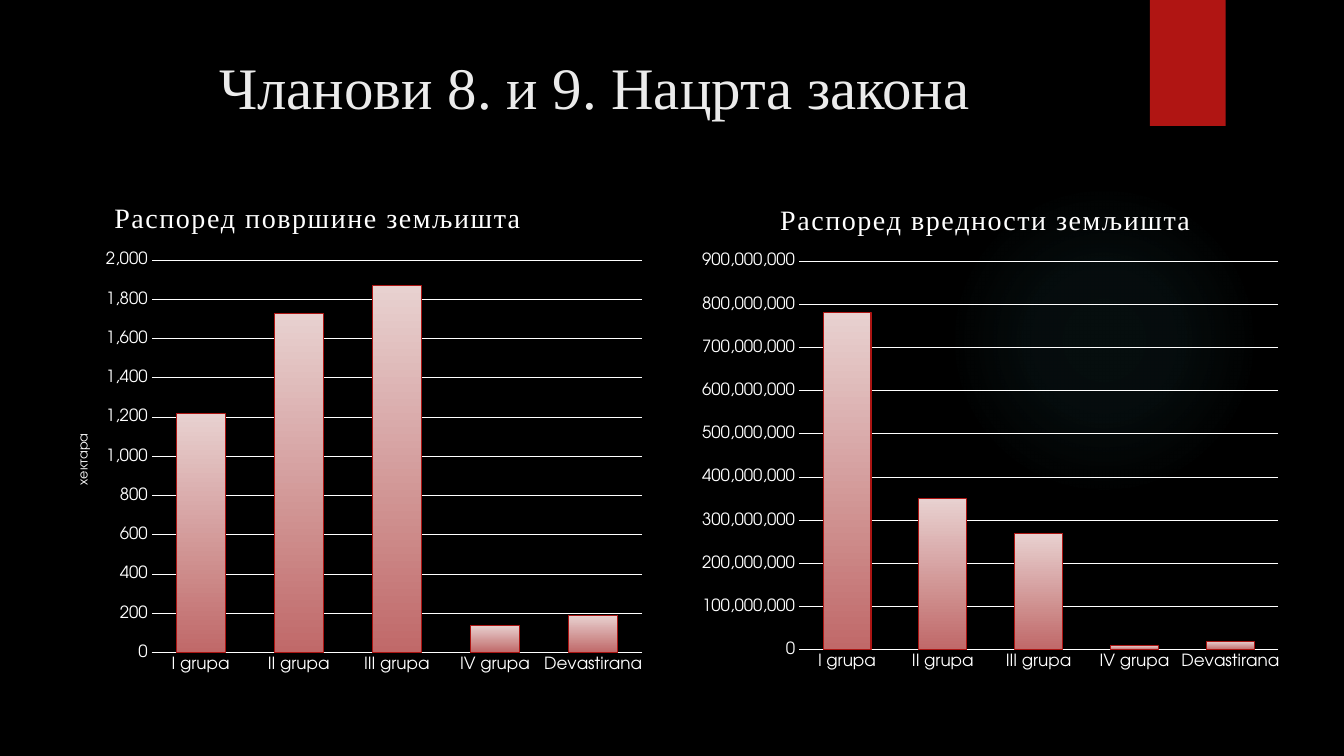
"""Build a dark slide with two column charts on land area and land value."""
from lxml import etree
from pptx import Presentation
from pptx.chart.data import CategoryChartData
from pptx.dml.color import RGBColor
from pptx.enum.chart import XL_CHART_TYPE, XL_TICK_MARK
from pptx.enum.shapes import MSO_SHAPE
from pptx.enum.text import MSO_ANCHOR, MSO_AUTO_SIZE, PP_ALIGN
from pptx.oxml.ns import qn
from pptx.util import Inches, Pt

COLUMN = XL_CHART_TYPE.COLUMN_CLUSTERED
NO_TICK = XL_TICK_MARK.NONE
OVAL, RECTANGLE = MSO_SHAPE.OVAL, MSO_SHAPE.RECTANGLE
TOP, NO_FIT, CENTER = MSO_ANCHOR.TOP, MSO_AUTO_SIZE.NONE, PP_ALIGN.CENTER

BLACK = RGBColor(0x00, 0x00, 0x00)
WHITE = RGBColor(0xFF, 0xFF, 0xFF)
PALE = RGBColor(0xEB, 0xEB, 0xEB)
RED = RGBColor(0xB0, 0x15, 0x13)
BAR_LINE = RGBColor(0xAC, 0x15, 0x13)
BAR_TOP = RGBColor(0xE8, 0xD1, 0xD0)
BAR_BOTTOM = RGBColor(0xC0, 0x69, 0x69)
GLOW = RGBColor(0x50, 0xB9, 0xC1)

SERIF, SANS = "Times New Roman", "TeX Gyre Adventor"
GROUPS = ["I grupa", "II grupa", "III grupa", "IV grupa", "Devastirana"]
WIDTH, HEIGHT = Inches(13.33), Inches(7.5)
GRID_COLUMNS, GRID_ROWS = 16, 9


def format_font(font, size, name=SANS, color=WHITE):
    font.size, font.name, font.bold = Pt(size), name, False
    font.color.rgb = color


def write_text(frame, text, spacing=0, turn=0, **style):
    frame.text = text
    span = frame.paragraphs[0].runs[0]
    format_font(span.font, **style)
    if spacing:
        span.font._element.set("spc", str(spacing * 100))
    if turn:
        frame._txBody.find(qn("a:bodyPr")).set("rot", str(turn * 60000))


def add_child(parent, tag, **attributes):
    return etree.SubElement(parent, qn(tag), {key: str(value) for key, value in attributes.items()})


def set_layout(element, target=None, **shares):
    for old in element.findall(qn("c:layout")):
        element.remove(old)
    layout = etree.Element(qn("c:layout"))
    manual = add_child(layout, "c:manualLayout")
    if target:
        add_child(manual, "c:layoutTarget", val=target)
    for mode in ("xMode", "yMode"):
        add_child(manual, f"c:{mode}", val="edge")
    for key, share in shares.items():
        add_child(manual, f"c:{key}", val=share)
    element.insert(1 if element.find(qn("c:tx")) is not None else 0, layout)


class SlideBuilder:
    def __init__(self, deck):
        self.page = deck.slides.add_slide(deck.slide_layouts[5])
        background = self.page.background.fill
        background.solid()
        background.fore_color.rgb = BLACK

    def place(self, left, top, width, height):
        column, row = WIDTH / GRID_COLUMNS, HEIGHT / GRID_ROWS
        return int(left * column), int(top * row), int(width * column), int(height * row)

    def title(self, text, *area):
        box = self.page.shapes.title
        box.left, box.top, box.width, box.height = self.place(*area)
        frame = box.text_frame
        frame.word_wrap, frame.auto_size, frame.vertical_anchor = True, NO_FIT, TOP
        write_text(frame, text, size=42, name=SERIF, color=PALE)
        frame.paragraphs[0].alignment = CENTER

    def shape(self, kind, color, *area):
        box = self.page.shapes.add_shape(kind, *self.place(*area))
        box.shadow.inherit = False
        box.fill.solid()
        box.fill.fore_color.rgb = color
        box.line.fill.background()
        return box

    def glow(self, color, stops, *area):
        properties = self.shape(OVAL, color, *area)._element.spPr
        gradient = etree.Element(qn("a:gradFill"), rotWithShape="1")
        stop_list = add_child(gradient, "a:gsLst")
        for position, opacity in stops:
            stop = add_child(stop_list, "a:gs", pos=position * 1000)
            add_child(add_child(stop, "a:srgbClr", val=color), "a:alpha", val=opacity * 1000)
        circle = add_child(gradient, "a:path", path="circle")
        add_child(circle, "a:fillToRect", l=50000, t=50000, r=50000, b=50000)
        properties.replace(properties.find(qn("a:solidFill")), gradient)

    def chart(self, heading, values, maximum, step, area, heading_at, plot_at, unit=None):
        data = CategoryChartData(number_format="#,##0")
        data.categories = GROUPS
        data.add_series("Series 1", values)
        chart = self.page.shapes.add_chart(COLUMN, *self.place(*area), data).chart
        format_font(chart.font, 10)
        chart.has_legend = False
        write_text(chart.chart_title.text_frame, heading, spacing=1, size=20, name=SERIF)
        set_layout(chart.chart_title._element, **heading_at)
        set_layout(chart._chartSpace.chart.plotArea, "inner", **plot_at)
        self.axes(chart, maximum, step, unit)
        self.bars(chart.plots[0])

    def axes(self, chart, maximum, step, unit):
        for axis in (chart.category_axis, chart.value_axis):
            axis.major_tick_mark = axis.minor_tick_mark = NO_TICK
            format_font(axis.tick_labels.font, 12)
        scale = chart.value_axis
        scale.minimum_scale, scale.maximum_scale, scale.major_unit = 0, maximum, step
        scale.tick_labels.number_format = "#,##0"
        scale.tick_labels.number_format_is_linked = False
        scale.format.line.fill.background()
        for line in (chart.category_axis.format.line, scale.major_gridlines.format.line):
            line.color.rgb, line.width = WHITE, Pt(0.75)
        if unit:
            write_text(scale.axis_title.text_frame, unit, turn=-90, size=10)
            set_layout(scale.axis_title._element, x=0.04, y=0.5)

    def bars(self, plot):
        plot.gap_width, plot.overlap, plot.vary_by_categories = 100, -24, False
        look = plot.series[0].format
        look.fill.gradient()
        look.fill.gradient_angle = 270
        for stop, color in zip(look.fill.gradient_stops, (BAR_TOP, BAR_BOTTOM)):
            stop.color.rgb = color
        look.line.color.rgb, look.line.width = BAR_LINE, Pt(0.75)


def main():
    deck = Presentation()
    deck.slide_width, deck.slide_height = WIDTH, HEIGHT
    builder = SlideBuilder(deck)
    builder.glow(GLOW, [(0, 7), (36, 6), (69, 0)], 11.29, 2.2, 3.7, 3.7)
    builder.shape(RECTANGLE, RED, 13.69, 0, 0.9, 1.5)
    builder.title("Чланови 8. и 9. Нацрта закона", 0.9, 0.54, 12.35, 1.84)
    builder.chart(
        "Распоред површине земљишта", [1220, 1730, 1870, 140, 190], 2000, 200,
        area=(0.58, 2.14, 7.21, 5.99), heading_at={"x": 0.1, "y": 0.03},
        plot_at={"x": 0.17, "y": 0.16, "w": 0.81, "h": 0.78}, unit="хектара")
    builder.chart(
        "Распоред вредности земљишта",
        [780000000, 350000000, 270000000, 10000000, 20000000], 900000000, 100000000,
        area=(8.23, 2.23, 7.13, 5.86), heading_at={"x": 0.14, "y": 0.02},
        plot_at={"x": 0.18, "y": 0.15, "w": 0.8, "h": 0.79})
    deck.save("out.pptx")


if __name__ == "__main__":
    main()
